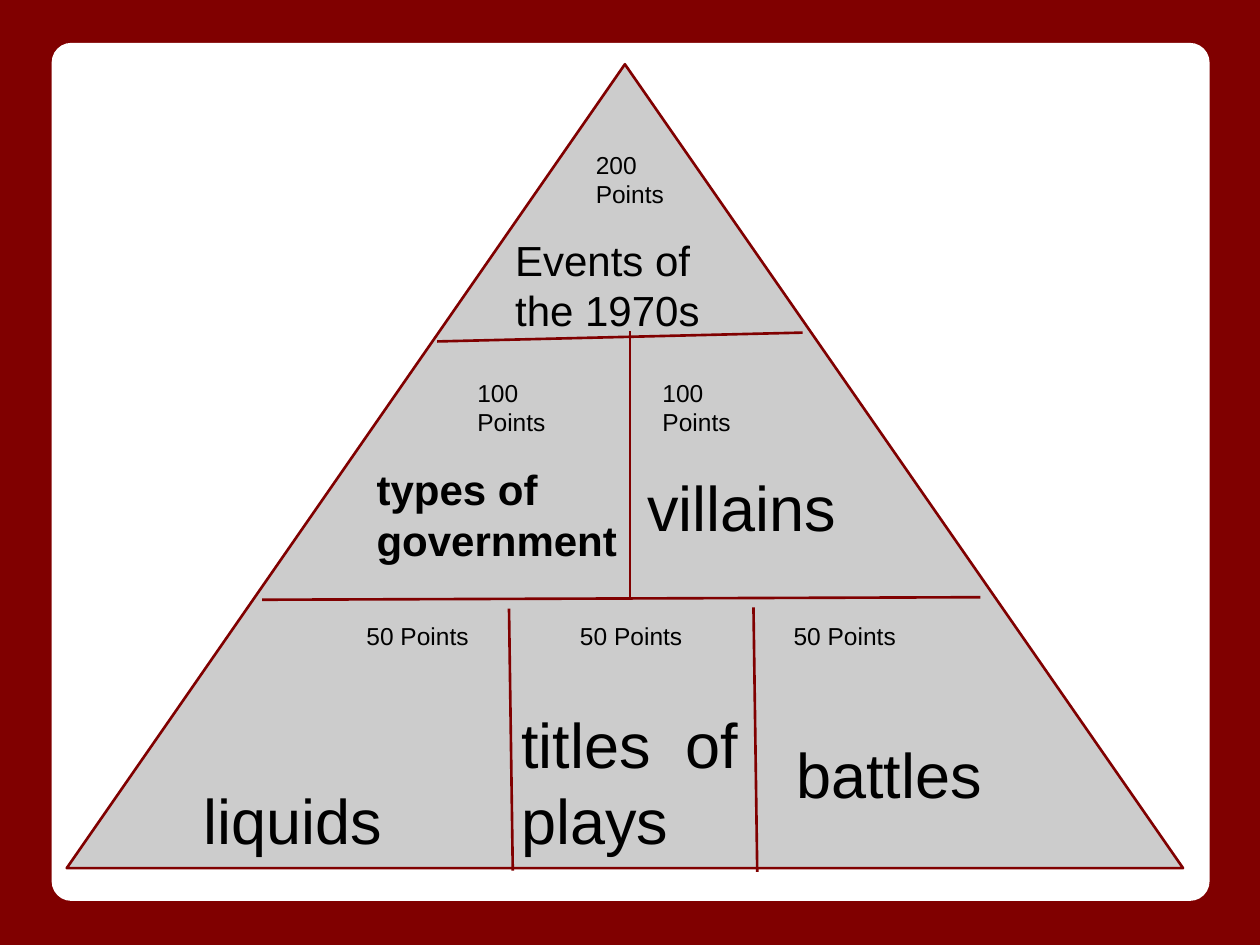
import pptx
import pptx.util
import pptx.dml.color
import pptx.enum.shapes
import pptx.oxml.ns
from lxml import etree

Inches, Pt = pptx.util.Inches, pptx.util.Pt
SHAPES = pptx.enum.shapes.MSO_SHAPE
MAROON, GREY, WHITE, BLACK = "800000", "CCCCCC", "FFFFFF", "000000"

# Offsets from the pyramid's top left corner, in inches
DIVIDERS = [
    (2.94, 2.20, 5.84, 2.13),
    (1.55, 4.25, 7.25, 4.23),
    (4.47, 2.12, 4.47, 4.25),
    (3.51, 4.32, 3.54, 6.40),
    (5.45, 4.31, 5.48, 6.41),
]
POINTS = [
    ("200 Points", 4.10, 0.58, 0.79, 0.79),
    ("100 Points", 3.16, 2.39, 1.04, 0.36),
    ("100 Points", 4.63, 2.39, 1.04, 0.36),
] + [("50 Points", 2.28 + 1.695 * i, 4.32, 1.04, 0.36) for i in range(3)]
CATEGORIES = [
    ("liquids", 0.99, 5.59, 2.53, 0.50, {}),
    ("titles  of plays", 3.51, 4.99, 1.94, 1.38, {}),
    ("battles", 5.69, 5.23, 2.26, 0.96, {}),
    ("types of government", 2.36, 3.07, 2.12, 1.17, {"size": 24, "bold": True}),
    ("villains", 4.51, 3.11, 2.11, 0.96, {}),
    ("Events of the 1970s", 3.46, 1.25, 1.94, 0.79, {"size": 24}),
]


def rgb(value):
    return pptx.dml.color.RGBColor.from_string(value)


def add_text(s, text, x, y, w, h, size=36, bold=False, color=BLACK):
    tf = s.shapes.add_textbox(Inches(x), Inches(y), Inches(w), Inches(h)).text_frame
    tf.word_wrap = True
    tf.margin_left = tf.margin_right = tf.margin_top = tf.margin_bottom = Inches(0.1)
    r = tf.paragraphs[0].add_run()
    r.text = text
    r.font.name, r.font.size, r.font.bold = "Arial", Pt(size), bold
    r.font.color.rgb = rgb(color)


def add_shape(s, kind, x, y, w, h, fill, line=None):
    sp = s.shapes.add_shape(kind, Inches(x), Inches(y), Inches(w), Inches(h))
    sp.shadow.inherit = False
    sp.fill.solid()
    sp.fill.fore_color.rgb = rgb(fill)
    if line:
        sp.line.color.rgb = rgb(line)
        sp.line.width = Pt(1.5)
    else:
        sp.line.fill.background()
    return sp


def add_divider(s, x1, y1, x2, y2):
    line = s.shapes.add_connector(
        pptx.enum.shapes.MSO_CONNECTOR.STRAIGHT,
        Inches(x1), Inches(y1), Inches(x2), Inches(y2))
    line.line.color.rgb = rgb(MAROON)
    line.line.width = Pt(1.5)
    etree.SubElement(line._element.spPr, pptx.oxml.ns.qn("a:effectLst"))


def add_frame(s, x, y, w, h):
    """Maroon background with a rounded white panel."""
    s.background.fill.solid()
    s.background.fill.fore_color.rgb = rgb(MAROON)
    add_shape(s, SHAPES.ROUNDED_RECTANGLE, x, y, w, h, WHITE).adjustments[0] = 0.023


def add_pyramid(s, x, y, w, h):
    """Triangle split into six cells, each with its points and category."""
    add_shape(s, SHAPES.FLOWCHART_EXTRACT, x, y, w, h, GREY, MAROON)
    for x1, y1, x2, y2 in DIVIDERS:
        add_divider(s, x + x1, y + y1, x + x2, y + y2)
    for text, dx, dy, tw, th in POINTS:
        add_text(s, text, x + dx, y + dy, tw, th, size=14)
    for text, dx, dy, tw, th, style in CATEGORIES:
        add_text(s, text, x + dx, y + dy, tw, th, **style)


def main():
    prs = pptx.Presentation()
    prs.slide_width, prs.slide_height = Inches(10), Inches(7.5)
    s = prs.slides.add_slide(prs.slide_layouts[6])
    add_frame(s, 0.41, 0.34, 9.19, 6.81)
    add_pyramid(s, 0.53, 0.51, 8.86, 6.38)
    prs.save("out.pptx")


if __name__ == "__main__":
    main()
